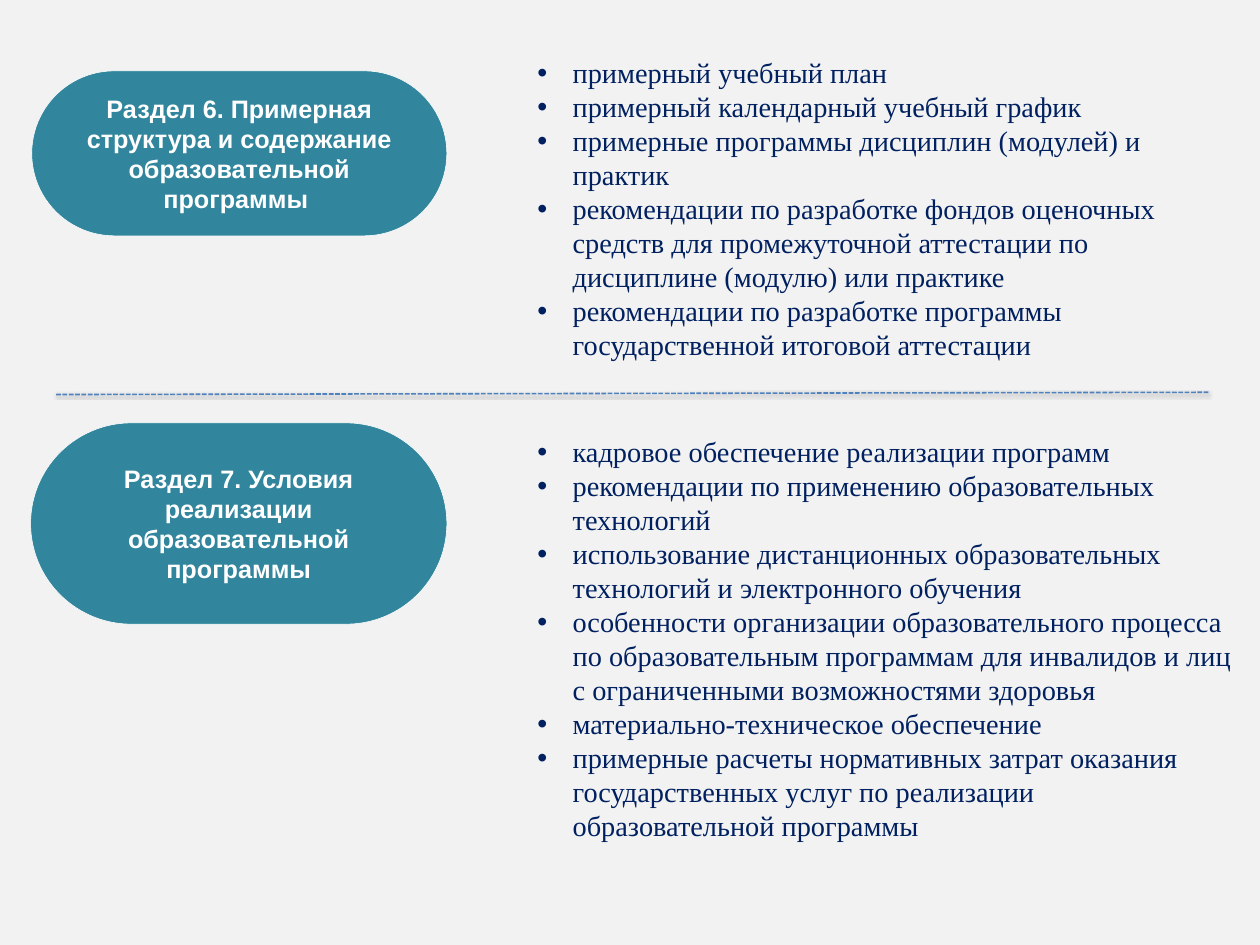
from lxml.etree import SubElement
from pptx import Presentation
from pptx.dml.color import RGBColor
from pptx.enum.dml import MSO_LINE_DASH_STYLE as Dash
from pptx.enum.shapes import MSO_CONNECTOR as Connector, MSO_SHAPE as Shape
from pptx.enum.text import MSO_ANCHOR as Anchor, MSO_AUTO_SIZE as AutoSize, PP_ALIGN as Align
from pptx.oxml.ns import qn
from pptx.util import Pt

EMU_PER_PX = 9144  # 100 px to the inch
COLORS = {
    "background": "F2F2F2",
    "pill": "31859C",
    "white": "FFFFFF",
    "bullets": "002060",
    "divider": "4F81BD",
    "shadow": "000000",
}


def px(*lengths):
    return [length * EMU_PER_PX for length in lengths]


def color(name):
    return RGBColor.from_string(COLORS[name])


class SectionSlide:
    heading_font, heading_size = "Arial", 32
    list_font, list_size = "Times New Roman", 36
    indent = 62

    def __init__(self, deck):
        self.slide = deck.slides.add_slide(deck.slide_layouts[6])
        fill = self.slide.background.fill
        fill.solid()
        fill.fore_color.rgb = color("background")

    def style(self, font, name, size, color_name, bold=False):
        font.name, font.size, font.bold = name, Pt(size), bold
        font.color.rgb = color(color_name)

    def heading(self, text, *box):
        pill = self.slide.shapes.add_shape(Shape.ROUNDED_RECTANGLE, *px(*box))
        pill.adjustments[0] = 0.5
        pill.shadow.inherit = False
        pill.fill.solid()
        pill.fill.fore_color.rgb = color("pill")
        pill.line.color.rgb = color("white")
        pill.line.width = Pt(0.75)
        frame = pill.text_frame
        frame.word_wrap = True
        frame.vertical_anchor = Anchor.MIDDLE
        frame.text = text
        paragraph = frame.paragraphs[0]
        paragraph.alignment = Align.CENTER
        self.style(paragraph.runs[0].font, self.heading_font,
                   self.heading_size, "white", True)

    def bullets(self, items, *box):
        frame = self.slide.shapes.add_textbox(*px(*box)).text_frame
        frame.word_wrap = True
        frame.auto_size = AutoSize.SHAPE_TO_FIT_TEXT
        frame.text = "\n".join(items)
        for paragraph in frame.paragraphs:
            props = paragraph._p.get_or_add_pPr()
            indent, = px(self.indent)
            props.set("marL", str(indent))
            props.set("indent", str(-indent))
            SubElement(props, qn("a:buFont"), typeface="Arial")
            SubElement(props, qn("a:buChar"), char="•")
            self.style(paragraph.runs[0].font, self.list_font,
                       self.list_size, "bullets")

    def divider(self, *ends):
        rule = self.slide.shapes.add_connector(Connector.STRAIGHT, *px(*ends))
        rule.line.color.rgb = color("divider")
        rule.line.width = Pt(2)
        rule.line.dash_style = Dash.SQUARE_DOT
        # Soft shadow below the line
        effects = SubElement(rule._element.spPr, qn("a:effectLst"))
        shadow = SubElement(effects, qn("a:outerShdw"), blurRad=str(Pt(3.1)),
                            dist=str(Pt(1.6)), dir="5400000", rotWithShape="0")
        tint = SubElement(shadow, qn("a:srgbClr"), val=COLORS["shadow"])
        SubElement(tint, qn("a:alpha"), val="38000")


def main():
    deck = Presentation()
    deck.slide_width, deck.slide_height = px(2222, 1667)
    page = SectionSlide(deck)

    # Section 6
    page.heading("Раздел 6. Примерная структура и содержание образовательной программы ",
                 56, 125, 732, 291)
    page.bullets([
        "примерный учебный план",
        "примерный календарный учебный график",
        "примерные программы дисциплин (модулей) и практик",
        "рекомендации по разработке фондов оценочных средств для промежуточной "
        "аттестации по дисциплине (модулю) или практике",
        "рекомендации по разработке программы государственной итоговой аттестации",
    ], 938, 93, 1248, 555)

    # Section 7
    page.heading("Раздел 7. Условия реализации образовательной программы",
                 54, 746, 734, 355)
    page.bullets([
        "кадровое обеспечение реализации программ",
        "рекомендации по применению образовательных технологий",
        "использование дистанционных образовательных технологий и электронного обучения",
        "особенности организации образовательного процесса по образовательным "
        "программам для инвалидов и лиц с ограниченными возможностями здоровья",
        "материально-техническое обеспечение",
        "примерные расчеты нормативных затрат оказания государственных услуг "
        "по реализации образовательной программы",
    ], 938, 761, 1251, 737)

    # Divider between the sections
    page.divider(99, 696, 2132, 692)

    deck.save("out.pptx")


if __name__ == "__main__":
    main()
